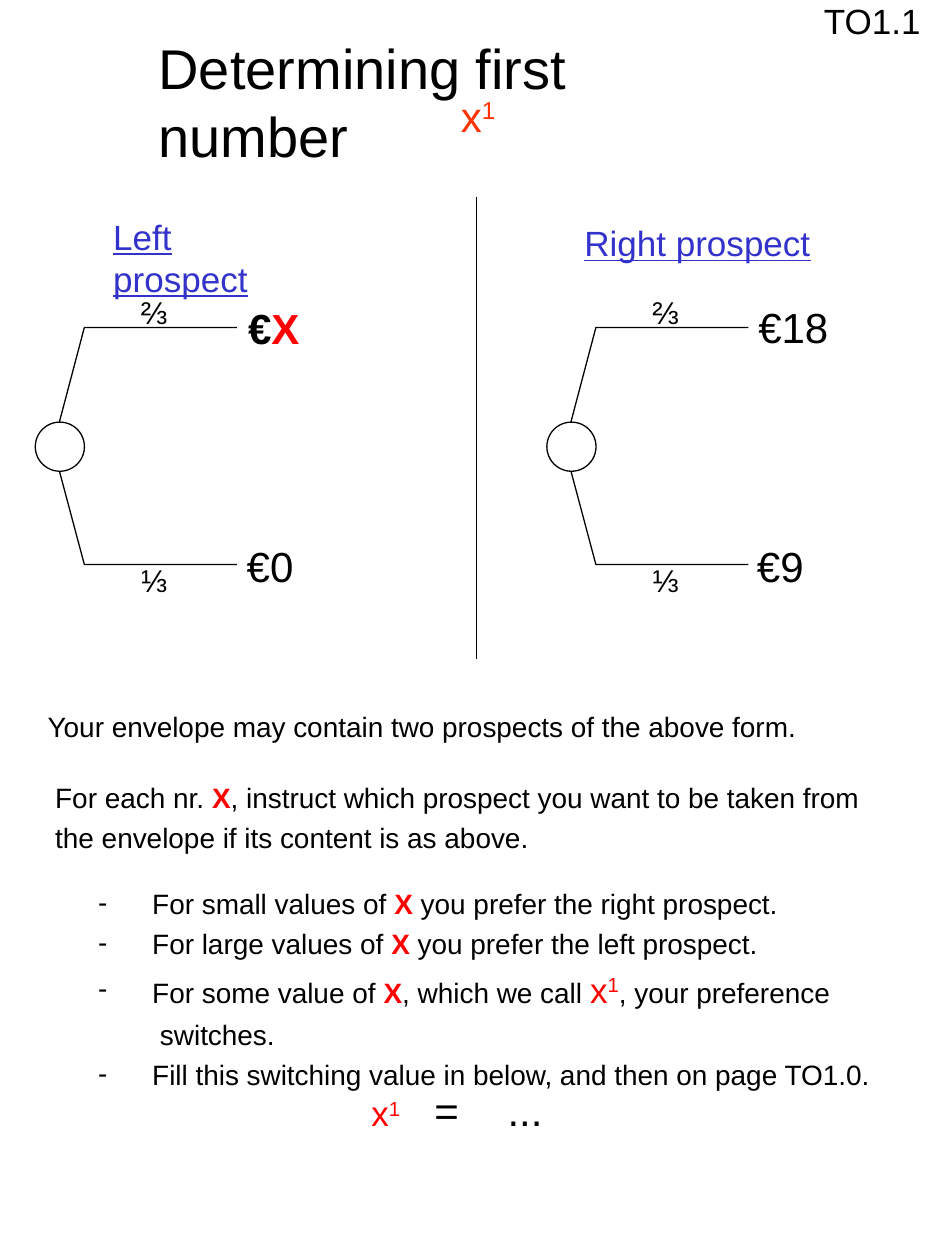
from lxml.etree import SubElement
from pptx import Presentation
from pptx.dml.color import RGBColor
from pptx.enum.shapes import MSO_CONNECTOR as Connector, MSO_SHAPE as Shape
from pptx.oxml.ns import qn
from pptx.util import Inches, Pt

BLACK, RED, ORANGE, BLUE, WHITE = "000000", "FF0000", "FF3300", "3333CC", "FFFFFF"
X = ("X", {"color": RED, "bold": True})


def switching_value(size, color):
    return [("x", {"size": size, "color": color}),
            ("1", {"size": size, "color": color, "raised": True})]


HEADINGS = [
    ((1.16, 0.22, 4.16, 0.63), 32, [("Determining first number", {})], True),
    ((3.56, 0.67, 0.49, 0.5), 24, switching_value(24, ORANGE), False),
    ((6.44, -0.05, 0.97, 0.43), 20, [("TO1.1", {})], False),
]
PROSPECTS = [
    {"left": 0.28, "title": "Left prospect", "title_at": (0.8, 1.66, 1.5, 0.43),
     "outcomes": [((1.87, 2.35, 0.61, 0.5), [("€", {"bold": True}), X]),
                  ((1.86, 4.24, 0.57, 0.5), [("€0", {})])]},
    {"left": 4.34, "title": "Right prospect", "title_at": (4.54, 1.71, 2.2, 0.43),
     "outcomes": [((5.92, 2.34, 0.76, 0.5), [("€18", {})]),
                  ((5.91, 4.24, 0.57, 0.5), [("€9", {})])]},
]
BRANCHES = [("⅔", 2.28, 2.6), ("⅓", 4.4, 4.48)]
INTRODUCTION = [("Your envelope may contain two prospects of the above form.", {})]
INSTRUCTION = [
    ("For each nr. ", {}), X,
    (", instruct which prospect you want to be taken from the envelope if its content is as above.", {}),
]
HINTS = [
    [("For small values of ", {}), X, (" you prefer the right prospect.", {})],
    [("For large values of ", {}), X, (" you prefer the left prospect.", {})],
    [("For some value of ", {}), X, (", which we call ", {}), *switching_value(20, RED),
     (", your preference\v switches.", {})],
    [("Fill this switching value in below, and then on page TO1.0.", {})],
]
ANSWER = switching_value(20, RED) + [("\t=\t...", {})]
ANSWER_TABS = [0.5, 1.08]
HINT_INDENT = 0.43
NODE_SIZE, NODE_TOP = 0.39, 3.35


def rgb(color):
    return RGBColor.from_string(color)


def add_runs(paragraph, runs, size):
    for part, style in runs:
        for index, line in enumerate(part.split("\v")):
            if index:
                paragraph.add_line_break()
            run = paragraph.add_run()
            run.text = line
            font = run.font
            font.name = "Arial"
            font.size = Pt(style.get("size", size))
            font.bold = style.get("bold", False)
            font.underline = style.get("underline", False)
            font.color.rgb = rgb(style.get("color", BLACK))
            if style.get("raised"):
                run._r.get_or_add_rPr().set("baseline", "30000")


def add_text(slide, box, size, paragraphs, wrap=False, spacing=None):
    shape = slide.shapes.add_textbox(*map(Inches, box))
    frame = shape.text_frame
    frame.word_wrap = wrap
    for index, runs in enumerate(paragraphs):
        paragraph = frame.add_paragraph() if index else frame.paragraphs[0]
        if spacing:
            paragraph.line_spacing = spacing
        add_runs(paragraph, runs, size)
    return frame


def style_outline(shape):
    shape.shadow.inherit = False
    shape.line.color.rgb = rgb(BLACK)
    shape.line.width = Pt(0.75)


def add_prospect(slide, prospect):
    left = prospect["left"]
    center = NODE_TOP + NODE_SIZE / 2
    for label, label_top, branch_y in BRANCHES:
        add_text(slide, (left + 0.74, label_top, 0.48, 0.4), 18, [[(label, {})]])
        builder = slide.shapes.build_freeform(Inches(left + 0.14), Inches(center))
        corners = [(left + 0.39, branch_y), (left + 1.6, branch_y)]
        builder.add_line_segments([(Inches(x), Inches(y)) for x, y in corners], close=False)
        branch = builder.convert_to_shape()
        branch.fill.background()
        style_outline(branch)
    node = slide.shapes.add_shape(
        Shape.OVAL, Inches(left), Inches(NODE_TOP), Inches(NODE_SIZE), Inches(NODE_SIZE))
    node.fill.solid()
    node.fill.fore_color.rgb = rgb(WHITE)
    style_outline(node)
    title = [(prospect["title"], {"color": BLUE, "underline": True})]
    add_text(slide, prospect["title_at"], 20, [title], True)
    for box, runs in prospect["outcomes"]:
        add_text(slide, box, 24, [runs])


def add_divider(slide):
    line = slide.shapes.add_connector(
        Connector.STRAIGHT, Inches(3.78), Inches(1.56), Inches(3.78), Inches(5.23))
    line.line.color.rgb = rgb(BLACK)
    line.line.width = Pt(0.75)
    SubElement(line._element.spPr, qn("a:effectLst"))


def add_hints(slide):
    frame = add_text(slide, (0.68, 6.93, 6.45, 1.78), 16, HINTS, True, 1.2)
    for paragraph in frame.paragraphs:
        properties = paragraph._p.get_or_add_pPr()
        properties.set("marL", str(Inches(HINT_INDENT)))
        properties.set("indent", str(-Inches(HINT_INDENT)))
        SubElement(properties, qn("a:buFont")).set("typeface", "Arial")
        SubElement(properties, qn("a:buChar")).set("char", "-")


def add_answer(slide):
    frame = add_text(slide, (2.85, 8.56, 1.8, 0.5), 24, [ANSWER], True)
    tabs = SubElement(frame.paragraphs[0]._p.get_or_add_pPr(), qn("a:tabLst"))
    for position in ANSWER_TABS:
        tab = SubElement(tabs, qn("a:tab"))
        tab.set("pos", str(Inches(position)))
        tab.set("algn", "l")


def main():
    presentation = Presentation()
    presentation.slide_width, presentation.slide_height = Inches(7.5), Inches(10)
    slide = presentation.slides.add_slide(presentation.slide_layouts[6])
    for box, size, runs, wrap in HEADINGS:
        add_text(slide, box, size, [runs], wrap)
    for prospect in PROSPECTS:
        add_prospect(slide, prospect)
    add_divider(slide)
    add_text(slide, (0.28, 5.53, 6.18, 0.42), 16, [INTRODUCTION], False, 1.2)
    add_text(slide, (0.34, 6.09, 6.84, 0.74), 16, [INSTRUCTION], True, 1.2)
    add_hints(slide)
    add_answer(slide)
    presentation.save("out.pptx")


if __name__ == "__main__":
    main()
